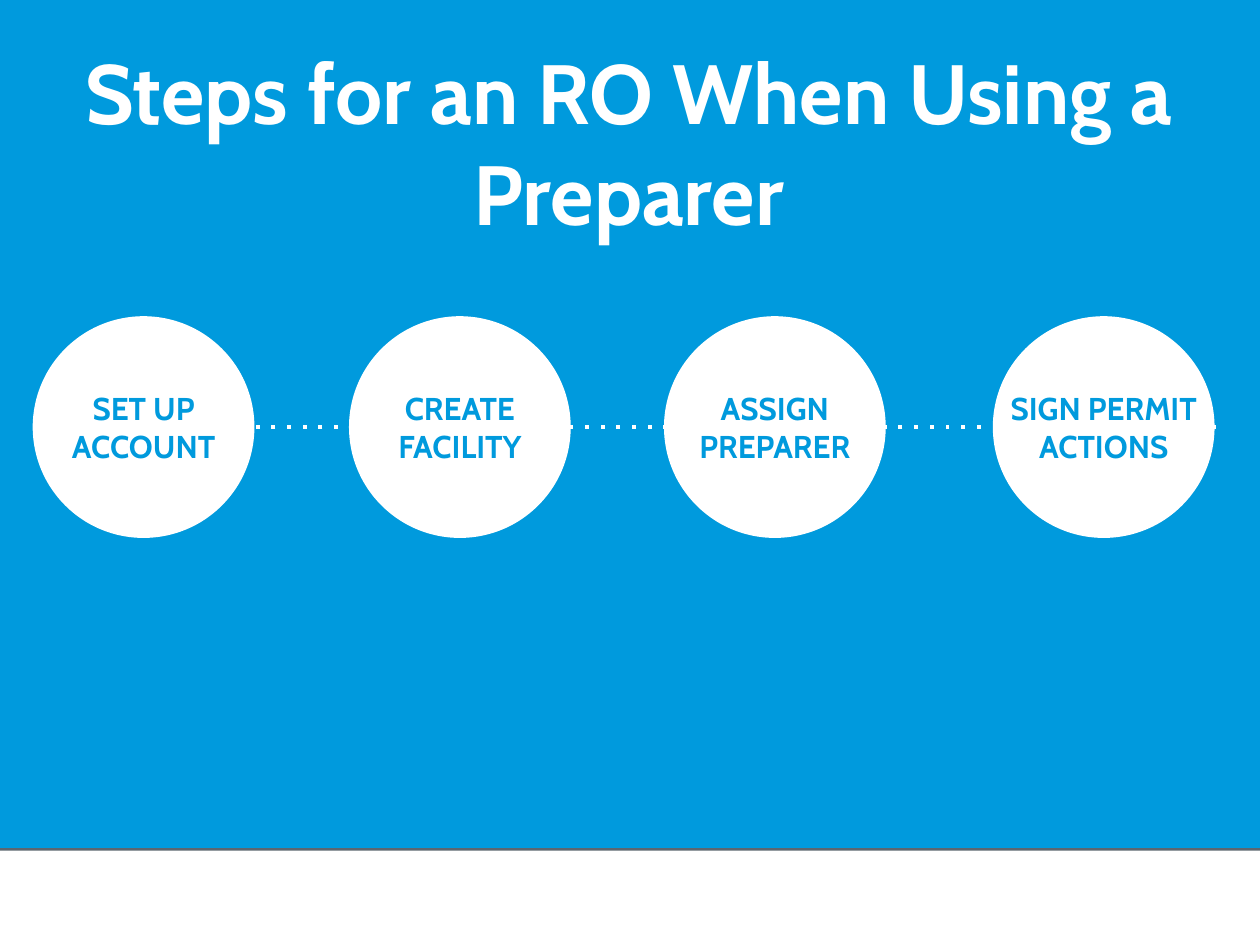
import pptx
import pptx.dml.color
import pptx.enum.dml
import pptx.enum.shapes
import pptx.enum.text
import pptx.oxml.ns
import pptx.util
from lxml import etree

Inches = pptx.util.Inches
Shapes = pptx.enum.shapes.MSO_SHAPE

COLORS = {"white": "FFFFFF", "blue": "009ADD", "gray": "5C666F"}
FONT = "Cabin"
TITLE = "Steps for an RO When Using a Preparer"
STEPS = [  # label, left edge of its circle
    ("SET UP ACCOUNT", 0.26),
    ("CREATE FACILITY", 2.77),
    ("ASSIGN PREPARER", 5.27),
    ("SIGN PERMIT ACTIONS", 7.88),
]
BANDS = [  # color, top, height
    ("gray", 0, 7.5),
    ("white", 6.75, 0.75),
    ("blue", 0, 6.73),
]
CIRCLE_TOP, CIRCLE_SIZE = 2.51, 1.76


def rgb(color):
    return pptx.dml.color.RGBColor.from_string(COLORS[color])


def add_plain_shape(slide, kind, area, color):
    shape = slide.shapes.add_shape(kind, *map(Inches, area))
    shape.shadow.inherit = False
    shape.fill.solid()
    shape.fill.fore_color.rgb = rgb(color)
    shape.line.fill.background()


def write_centered(box, text, size, color):
    frame = box.text_frame
    frame.word_wrap = True
    frame.auto_size = pptx.enum.text.MSO_AUTO_SIZE.NONE
    frame.vertical_anchor = pptx.enum.text.MSO_ANCHOR.MIDDLE
    frame.margin_left = frame.margin_right = Inches(0.1)
    frame.margin_top = frame.margin_bottom = Inches(0.1)
    para = frame.paragraphs[0]
    para.alignment = pptx.enum.text.PP_ALIGN.CENTER
    span = para.add_run()
    span.text = text
    span.font.name = FONT
    span.font.size = pptx.util.Pt(size)
    span.font.bold = True
    span.font.color.rgb = rgb(color)


def add_dotted_line(slide, start, end, y):
    line = slide.shapes.add_connector(
        pptx.enum.shapes.MSO_CONNECTOR.STRAIGHT,
        Inches(start), Inches(y), Inches(end), Inches(y))
    line.line.color.rgb = rgb("white")
    line.line.width = pptx.util.Pt(2.25)
    line.line.dash_style = pptx.enum.dml.MSO_LINE.ROUND_DOT
    properties = line._element.spPr
    properties.find(".//" + pptx.oxml.ns.qn("a:prstDash")).set("val", "dot")
    etree.SubElement(properties, pptx.oxml.ns.qn("a:effectLst"))


def main():
    deck = pptx.Presentation()
    deck.slide_width, deck.slide_height = Inches(10), Inches(7.5)
    slide = deck.slides.add_slide(deck.slide_layouts.get_by_name("Title Only"))

    for color, top, height in BANDS:
        add_plain_shape(slide, Shapes.RECTANGLE, (0, top, 10, height), color)

    add_dotted_line(slide, 9.65, 0.34, CIRCLE_TOP + CIRCLE_SIZE / 2)
    for label, left in STEPS:
        area = (left, CIRCLE_TOP, CIRCLE_SIZE, CIRCLE_SIZE)
        add_plain_shape(slide, Shapes.OVAL, area, "white")
        box = slide.shapes.add_textbox(*map(Inches, area))
        write_centered(box, label, 18, "blue")

    title = slide.shapes.title
    title.left, title.top = Inches(-0.11), Inches(0.11)
    title.width, title.height = Inches(10.2), Inches(2.02)
    write_centered(title, TITLE, 48, "white")
    # The title must sit in front of the blue band
    slide.shapes._spTree.append(title._element)

    deck.save("out.pptx")


if __name__ == "__main__":
    main()
